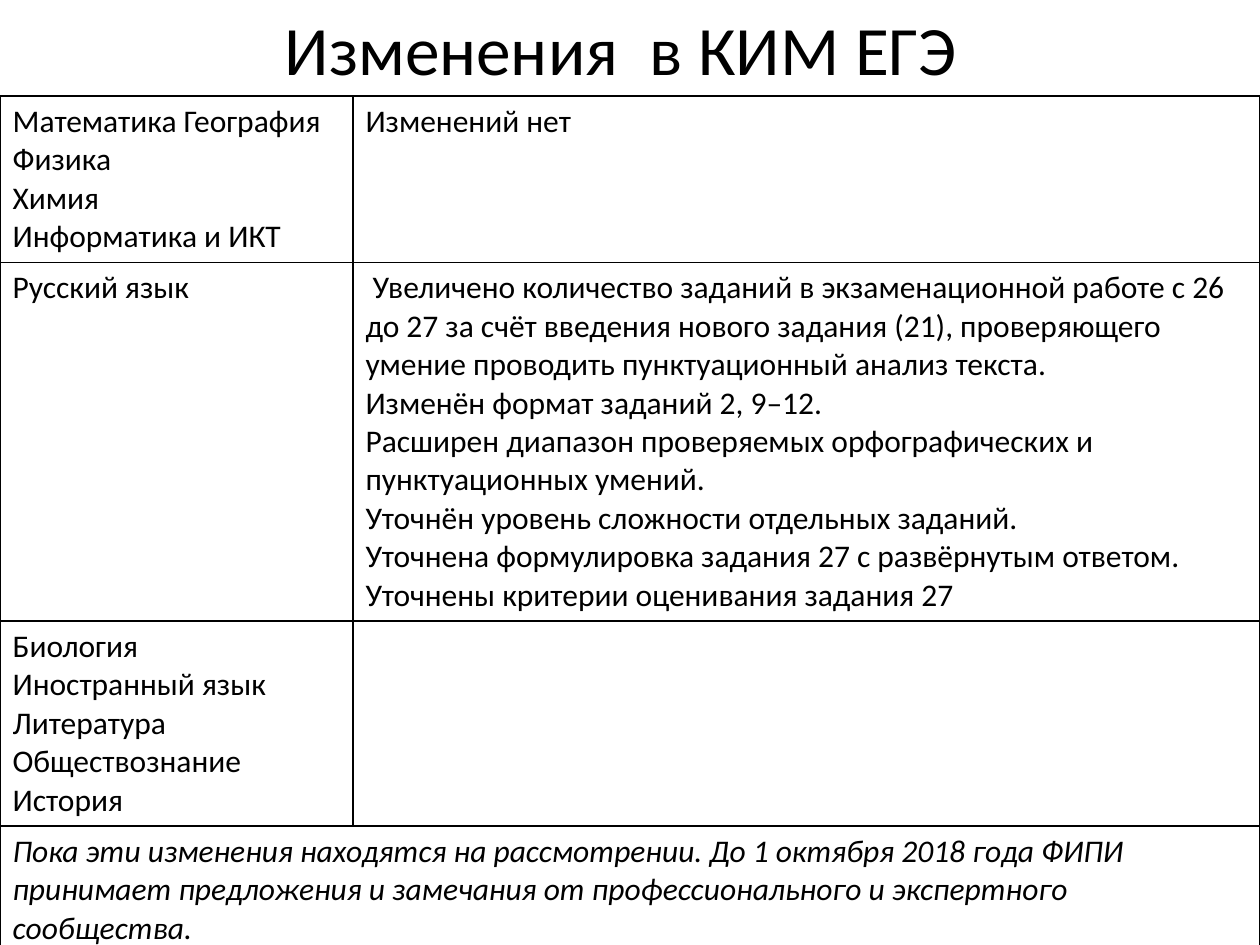
"""Build the slide that lists changes in exam papers by subject."""
from lxml.etree import SubElement
from pptx import Presentation
from pptx.dml.color import RGBColor
from pptx.enum.text import MSO_ANCHOR, MSO_AUTO_SIZE, PP_ALIGN
from pptx.oxml.ns import qn
from pptx.util import Emu, Pt

BLACK = RGBColor(0, 0, 0)
SCALE = 914400 // 126

COLS = [353, 907]
ROWS = [166, 358, 205, 115]
CELLS = [
    [["Математика География", "Физика", "Химия", "Информатика и ИКТ"],
     ["Изменений нет"]],
    [["Русский язык"],
     [" Увеличено количество заданий в экзаменационной работе с 26 до 27 за счёт "
      "введения нового задания (21), проверяющего умение проводить пунктуационный "
      "анализ текста.",
      "Изменён формат заданий 2, 9–12.",
      "Расширен диапазон проверяемых орфографических и пунктуационных умений.",
      "Уточнён уровень сложности отдельных заданий.",
      "Уточнена формулировка задания 27 с развёрнутым ответом. "
      "Уточнены критерии оценивания задания 27"]],
    [["Биология", "Иностранный язык", "Литература", "Обществознание", "История"], []],
]
NOTE = ["Пока эти изменения находятся на рассмотрении. До 1 октября 2018 года ФИПИ "
        "принимает предложения и замечания от профессионального и экспертного "
        "сообщества."]


def px(num):
    return Emu(num * SCALE)


def write(frame, lines, size=18, font="Calibri", color=BLACK, italic=False,
          align=PP_ALIGN.LEFT):
    for i, line in enumerate(lines):
        para = frame.add_paragraph() if i else frame.paragraphs[0]
        para.alignment = align
        run = para.add_run()
        run.text = line
        run.font.size = Pt(size)
        run.font.name = font
        run.font.italic = italic
        run.font.color.rgb = color


class Page:
    def __init__(self, deck, line=BLACK, width=1):
        self.slide = deck.slides.add_slide(deck.slide_layouts[5])
        self.line = line
        self.width = width

    def title(self, text, x, y, w, h, size):
        shape = self.slide.shapes.title
        shape.left, shape.top, shape.width, shape.height = map(px, (x, y, w, h))
        frame = shape.text_frame
        frame.auto_size = MSO_AUTO_SIZE.NONE
        frame.vertical_anchor = MSO_ANCHOR.MIDDLE
        write(frame, [text], size=size, align=PP_ALIGN.CENTER)

    def table(self, x, y, cols, rows):
        shape = self.slide.shapes.add_table(
            len(rows), len(cols), px(x), px(y), px(sum(cols)), px(sum(rows)))
        table = shape.table
        table.first_row = table.horz_banding = False
        for col, w in zip(table.columns, cols):
            col.width = px(w)
        for row, h in zip(table.rows, rows):
            row.height = px(h)
        for cell in table.iter_cells():
            self.border(cell)
            cell.fill.background()
        return table

    def border(self, cell):
        props = cell._tc.get_or_add_tcPr()
        for side in ("lnL", "lnR", "lnT", "lnB"):
            edge = SubElement(props, qn(f"a:{side}"), w=str(Pt(self.width)))
            fill = SubElement(edge, qn("a:solidFill"))
            SubElement(fill, qn("a:srgbClr"), val=str(self.line))


def main():
    deck = Presentation()
    deck.slide_width, deck.slide_height = px(1260), px(945)
    page = Page(deck)
    page.title("Изменения  в КИМ ЕГЭ", 54, 0, 1134, 96, size=39.6)
    table = page.table(0, 96, COLS, ROWS)
    for r, row in enumerate(CELLS):
        for c, lines in enumerate(row):
            write(table.cell(r, c).text_frame, lines)
    last = len(CELLS)
    table.cell(last, 0).merge(table.cell(last, 1))
    write(table.cell(last, 0).text_frame, NOTE, italic=True)
    deck.save("out.pptx")


if __name__ == "__main__":
    main()
